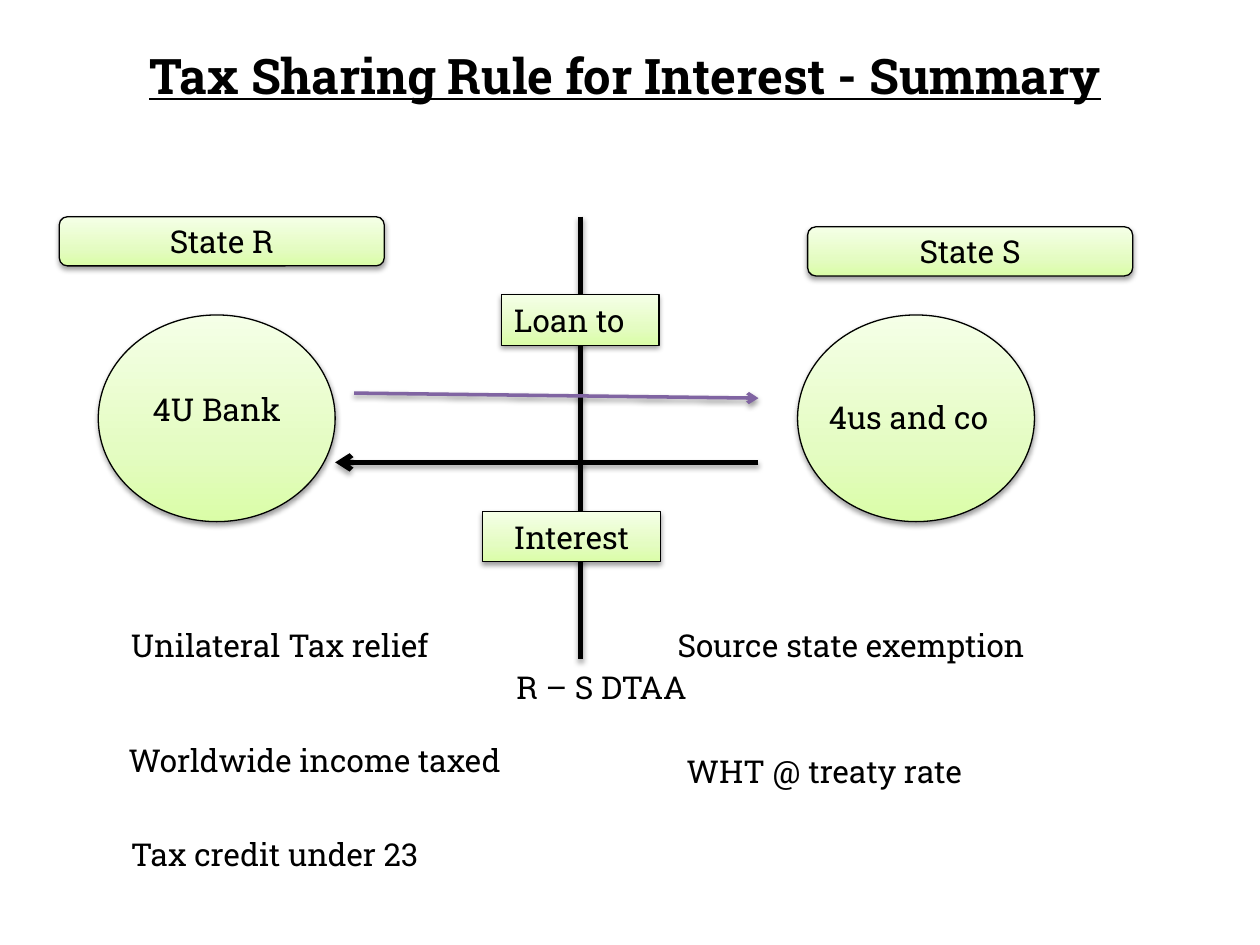
import copy
from dataclasses import dataclass

import pptx
import pptx.util
from lxml import etree
from pptx.dml.color import RGBColor
from pptx.enum.shapes import MSO_CONNECTOR, MSO_SHAPE
from pptx.enum.text import MSO_ANCHOR, PP_ALIGN
from pptx.oxml.ns import qn
from pptx.util import Inches


@dataclass(frozen=True)
class Theme:
    """Fonts, sizes and colours of the slide."""
    font: str = "Roboto Slab"
    title_size: float = 28
    body_size: float = 18
    ink: str = "000000"
    loan: str = "8064A2"
    stops: tuple = ((0, "DAFDA7"), (0.35, "E4FCC2"), (1, "F5FFE7"))
    outline: float = 0.75
    loan_line: float = 2
    heavy_line: float = 3


THEME = Theme()
LEFT, CENTER = PP_ALIGN.LEFT, PP_ALIGN.CENTER


def rgb(value):
    """Turn a hex string into a colour."""
    return RGBColor.from_string(value)


def write(tf, text, size=THEME.body_size, align=LEFT, anchor=MSO_ANCHOR.TOP,
          bold=False, underline=False):
    """Put one formatted paragraph into a text frame."""
    tf.word_wrap = True
    tf.vertical_anchor = anchor
    p = tf.paragraphs[0]
    p.alignment = align
    r = p.add_run()
    r.text = text
    r.font.name = THEME.font
    r.font.size = pptx.util.Pt(size)
    r.font.bold = bold
    r.font.underline = underline
    r.font.color.rgb = rgb(THEME.ink)


def cast_shadow(sp, alpha=38, distance=1.6):
    """Give a shape or connector a soft shadow below it."""
    effects = etree.SubElement(sp._element.spPr, qn("a:effectLst"))
    shadow = etree.SubElement(
        effects, qn("a:outerShdw"), blurRad=str(pptx.util.Pt(3.1)),
        dist=str(pptx.util.Pt(distance)), dir="5400000", rotWithShape="0")
    color = etree.SubElement(shadow, qn("a:srgbClr"), val=THEME.ink)
    etree.SubElement(color, qn("a:alpha"), val=str(alpha * 1000))


def add_text(s, x, y, w, text, **fmt):
    """Add a one-line text box."""
    sp = s.shapes.add_textbox(Inches(x), Inches(y), Inches(w), Inches(0.4))
    write(sp.text_frame, text, **fmt)


def add_green(s, kind, x, y, w, h, text=None, align=CENTER):
    """Add an outlined shape with the green gradient and a shadow."""
    sp = s.shapes.add_shape(kind, Inches(x), Inches(y), Inches(w), Inches(h))
    sp.fill.gradient()
    sp.fill.gradient_angle = 90
    stop_list = sp._element.spPr.find(".//" + qn("a:gsLst"))
    stop_list.append(copy.deepcopy(stop_list[0]))
    for stop, (position, color) in zip(sp.fill.gradient_stops, THEME.stops):
        stop.position = position
        stop.color.rgb = rgb(color)
    sp.line.color.rgb = rgb(THEME.ink)
    sp.line.width = pptx.util.Pt(THEME.outline)
    cast_shadow(sp)
    if text:
        write(sp.text_frame, text, align=align, anchor=MSO_ANCHOR.MIDDLE)


def add_line(s, start, end, color=THEME.ink, width=THEME.heavy_line, arrow=True,
             alpha=35, distance=1.8):
    """Add a straight connector, with an arrowhead at its end if wanted."""
    sp = s.shapes.add_connector(
        MSO_CONNECTOR.STRAIGHT, *(Inches(v) for v in (*start, *end)))
    sp.line.color.rgb = rgb(color)
    sp.line.width = pptx.util.Pt(width)
    if arrow:
        etree.SubElement(sp.line._get_or_add_ln(), qn("a:tailEnd"), type="arrow")
    cast_shadow(sp, alpha, distance)


def add_title(s, x, y, w, h, text):
    """Place the slide title in its placeholder."""
    sp = s.shapes.title
    sp.left, sp.top, sp.width, sp.height = (Inches(v) for v in (x, y, w, h))
    write(sp.text_frame, text, size=THEME.title_size, align=CENTER,
          bold=True, underline=True)


def add_state(s, x, y, state, party, label, circle, name, name_w, align):
    """Draw a state's label, circle and party at offsets from its corner."""
    add_green(s, MSO_SHAPE.ROUNDED_RECTANGLE, x + label[0], y + label[1],
              2.58, 0.39, state)
    add_green(s, MSO_SHAPE.OVAL, x + circle[0], y + circle[1], 1.88, 1.64)
    add_text(s, x + name[0], y + name[1], name_w, party, align=align)


def add_flows(s, x, y):
    """Draw the border and the two flows that cross it."""
    border = x + 1.95
    add_line(s, (border, y), (border, y + 3.51), arrow=False)
    add_line(s, (x + 0.15, y + 1.4), (x + 3.36, y + 1.44), THEME.loan,
             THEME.loan_line, alpha=38, distance=1.6)
    add_line(s, (x + 3.36, y + 1.95), (x, y + 1.95))
    add_green(s, MSO_SHAPE.RECTANGLE, x + 1.32, y + 0.62, 1.25, 0.4,
              "Loan to", LEFT)
    add_green(s, MSO_SHAPE.RECTANGLE, x + 1.17, y + 2.34, 1.41, 0.4, "Interest")
    add_text(s, x + 0.67, y + 3.53, 2.89, "R – S DTAA", align=CENTER)


def add_notes(s, x, y, notes):
    """Place a column of remarks, each at its own offset."""
    for dx, dy, w, text in notes:
        add_text(s, x + dx, y + dy, w, text)


def main():
    """Build the slide and save it."""
    prs = pptx.Presentation()
    prs.slide_width, prs.slide_height = Inches(10), Inches(7.5)
    s = prs.slides.add_slide(prs.slide_layouts[5])
    add_title(s, 0.47, 0.31, 8.98, 0.57, "Tax Sharing Rule for Interest - Summary")
    add_flows(s, 2.66, 1.72)
    add_state(s, 0.47, 1.72, "State R", "4U Bank", label=(0, 0),
              circle=(0.31, 0.78), name=(0.47, 1.33), name_w=1.56, align=CENTER)
    add_state(s, 6.33, 1.72, "State S", "4us and co", label=(0.08, 0.08),
              circle=(0, 0.78), name=(0.15, 1.39), name_w=1.64, align=LEFT)
    add_notes(s, 0.92, 4.92, [(0.02, 0, 2.89, "Unilateral Tax relief"),
                              (0, 0.91, 3.23, "Worldwide income taxed"),
                              (0.02, 1.66, 2.89, "Tax credit under 23")])
    add_notes(s, 5.28, 4.92, [(0, 0, 3.14, "Source state exemption"),
                              (0.07, 1, 3.23, "WHT @ treaty rate")])
    prs.save("out.pptx")


if __name__ == "__main__":
    main()
